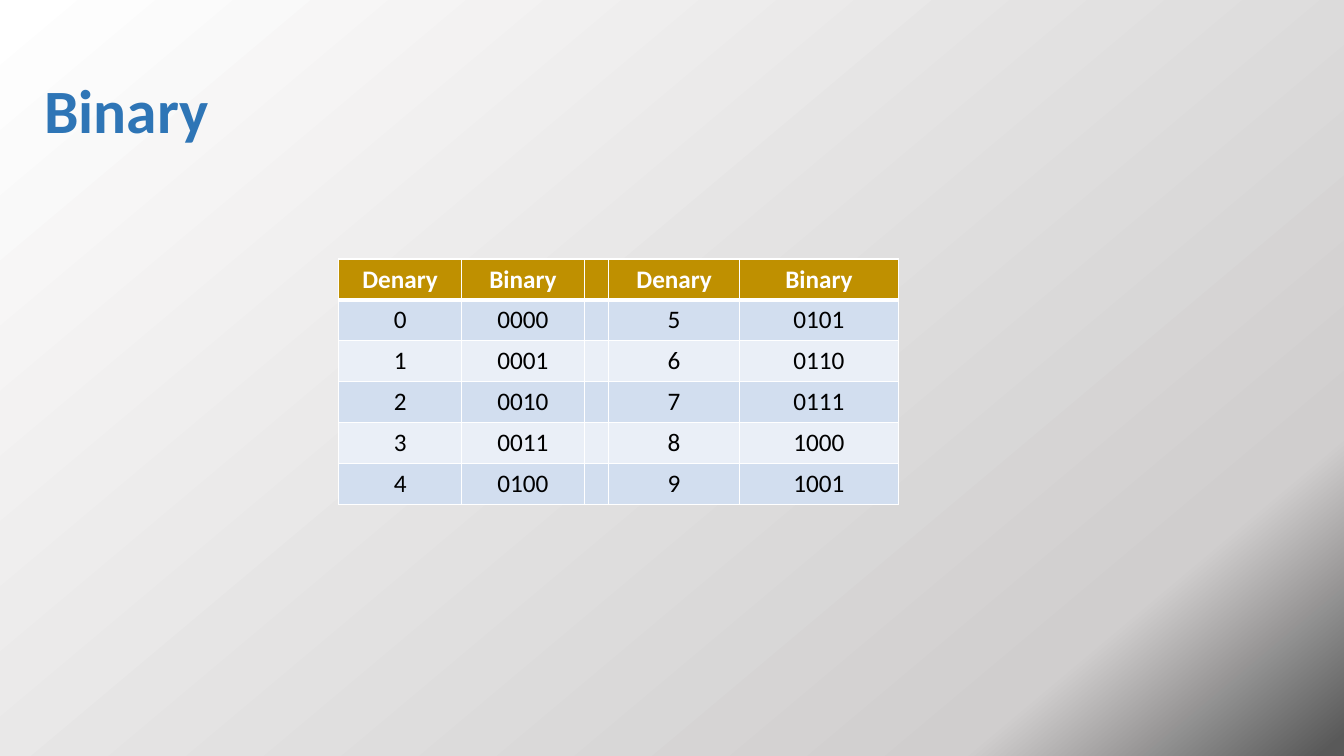
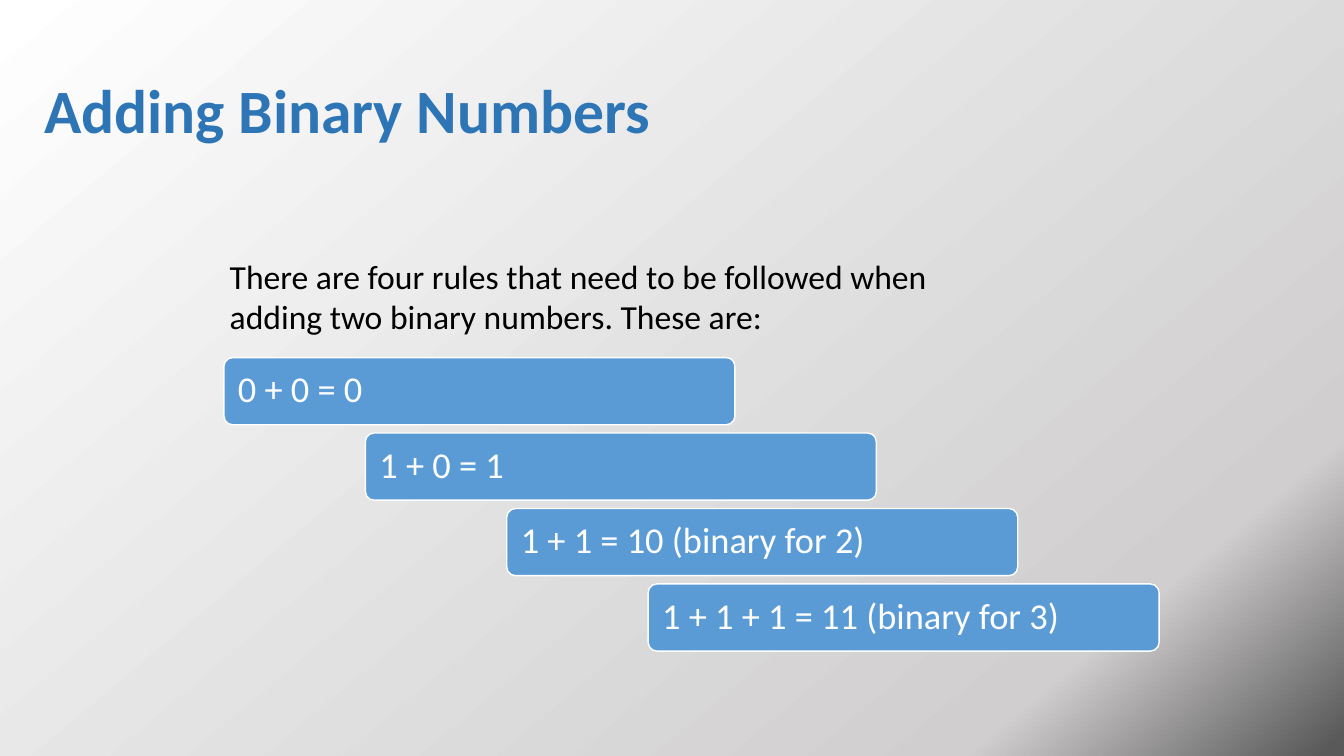
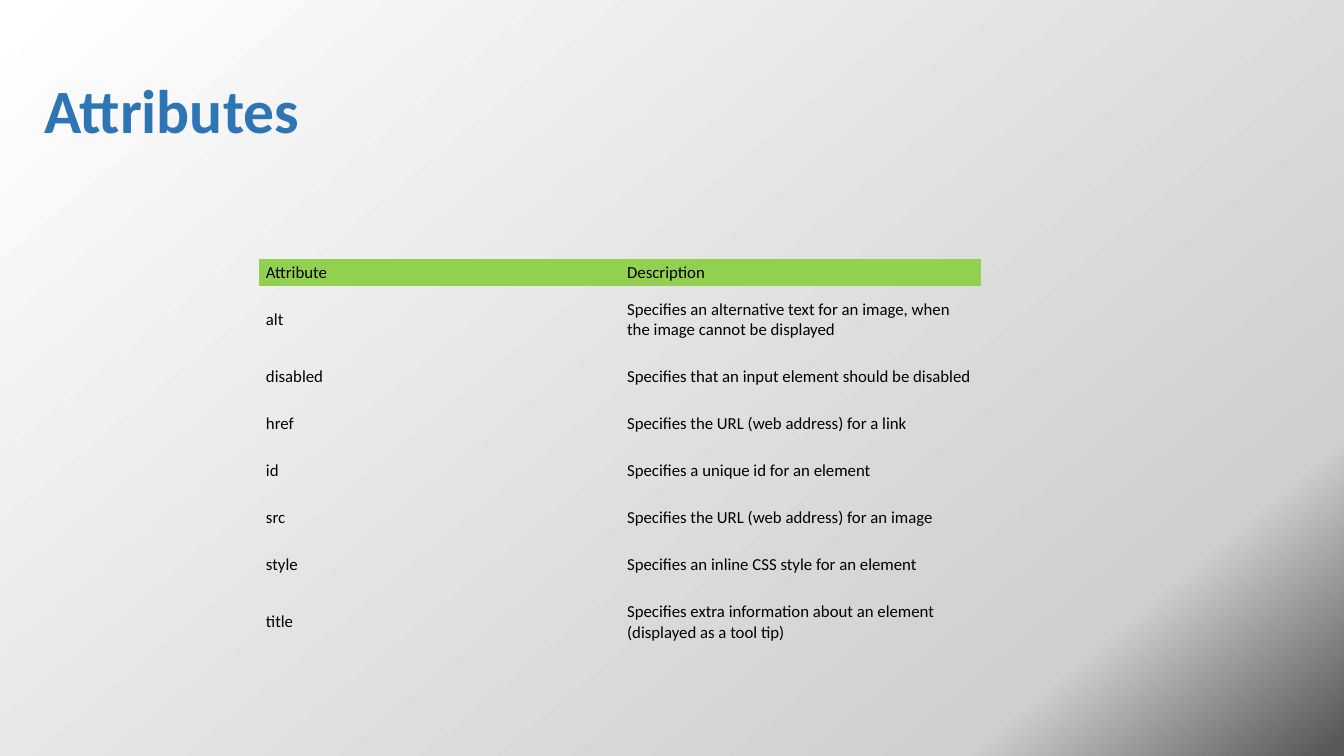
"""Build three slides on binary numbers and HTML attributes."""
from lxml import etree
from pptx import Presentation
from pptx.dml.color import RGBColor
from pptx.enum.shapes import MSO_SHAPE
from pptx.enum.text import MSO_ANCHOR, PP_ALIGN
from pptx.oxml.ns import qn
from pptx.util import Pt

ROUNDED = MSO_SHAPE.ROUNDED_RECTANGLE
TOP, MIDDLE = MSO_ANCHOR.TOP, MSO_ANCHOR.MIDDLE
LEFT, CENTER = PP_ALIGN.LEFT, PP_ALIGN.CENTER

FONT = "Calibri"
BLACK, WHITE, TITLE_BLUE, RULE_BLUE = "000000", "FFFFFF", "2E75B6", "5B9BD5"
GOLD, GREEN, BANDS = "BF9000", "92D050", ("D2DEEF", "EAEFF7")
BACKGROUND = [(1, "595959"), (17, "D0CECE"), (100, "FFFFFF")]
PLAIN_TABLE = "{2D5ABB26-0587-4C30-8999-92F81FD0307C}"

BINARY_HEAD = ["Denary", "Binary", "", "Denary", "Binary"]
BINARY_ROWS = [[str(n), f"{n:04b}", "", str(n + 5), f"{n + 5:04b}"] for n in range(5)]
BINARY_COLS = [87.8, 87.8, 16.8, 93.6, 113.4]

INTRO = ("There are four rules that need to be followed when adding two "
         "binary numbers. These are:")
RULES = ["0 + 0 = 0", "1 + 0 = 1", "1 + 1 = 10 (binary for 2)",
         "1 + 1 + 1 = 11 (binary for 3)"]

ATTRIBUTES = [
    ("Attribute", "Description"),
    ("alt", "Specifies an alternative text for an image, when the image cannot be displayed"),
    ("disabled", "Specifies that an input element should be disabled"),
    ("href", "Specifies the URL (web address) for a link"),
    ("id", "Specifies a unique id for an element"),
    ("src", "Specifies the URL (web address) for an image"),
    ("style", "Specifies an inline CSS style for an element"),
    ("title", "Specifies extra information about an element (displayed as a tool tip)"),
]
ATTRIBUTE_HEIGHTS = [19.4, 48, 33.6, 33.6, 33.6, 33.6, 33.6, 48]


def rgb(color):
    return RGBColor.from_string(color)


def set_text(tf, text, size, color, bold=False, align=LEFT, spacing=None):
    tf.text = text
    p = tf.paragraphs[0]
    p.alignment = align
    if spacing:
        p.line_spacing = spacing
    for r in p.runs:
        r.font.name, r.font.size, r.font.bold = FONT, Pt(size), bold
        r.font.color.rgb = rgb(color)


def set_background(master):
    fill = master.background.fill
    fill.gradient()
    fill.gradient_angle = 130
    stops = master.element.find(".//" + qn("a:gsLst"))
    stops.clear()
    for position, color in BACKGROUND:
        gs = etree.SubElement(stops, qn("a:gs"), pos=str(position * 1000))
        etree.SubElement(gs, qn("a:srgbClr"), val=color)


def add_text(s, box, text, size, color, bold=False, anchor=TOP, spacing=None):
    tf = s.shapes.add_textbox(*map(Pt, box)).text_frame
    tf.word_wrap = True
    tf.vertical_anchor = anchor
    set_text(tf, text, size, color, bold, spacing=spacing)


def add_slide(prs, title):
    s = prs.slides.add_slide(prs.slide_layouts[6])
    add_text(s, (24.5, 28.8, 913, 104.4), title, 44, TITLE_BLUE, True, MIDDLE, 0.9)
    return s


def add_table(s, left, top, widths, heights):
    frame = s.shapes.add_table(len(heights), len(widths), Pt(left), Pt(top),
                               Pt(sum(widths)), Pt(sum(heights)))
    table = frame.table
    table.first_row = table.horz_banding = False
    frame._element.find(".//" + qn("a:tableStyleId")).text = PLAIN_TABLE
    for column, width in zip(table.columns, widths):
        column.width = Pt(width)
    for row, height in zip(table.rows, heights):
        row.height = Pt(height)
    return table


def fill_cell(cell, color):
    cell.fill.solid()
    cell.fill.fore_color.rgb = rgb(color)


def set_borders(cell, top, bottom):
    tcPr = cell._tc.get_or_add_tcPr()
    widths = {"lnL": 1, "lnR": 1, "lnT": top, "lnB": bottom}
    for i, (side, width) in enumerate(widths.items()):
        ln = etree.Element(qn("a:" + side), w=str(Pt(width)))
        fill = etree.SubElement(ln, qn("a:solidFill"))
        etree.SubElement(fill, qn("a:srgbClr"), val=WHITE)
        tcPr.insert(i, ln)


def binary_slide(prs):
    s = add_slide(prs, "Binary")
    rows = [BINARY_HEAD] + BINARY_ROWS
    table = add_table(s, 241.9, 185, BINARY_COLS, [29.2] * len(rows))
    for i, row in enumerate(rows):
        head = i == 0
        for j, text in enumerate(row):
            cell = table.cell(i, j)
            set_text(cell.text_frame, text, 18, WHITE if head else BLACK, head, CENTER)
            fill_cell(cell, GOLD if head else BANDS[(i - 1) % 2])
            set_borders(cell, 3 if i == 1 else 1, 3 if head else 1)


def adding_slide(prs):
    s = add_slide(prs, "Adding Binary Numbers")
    for i, rule in enumerate(RULES):
        sp = s.shapes.add_shape(ROUNDED, Pt(160 + 101 * i), Pt(255.4 + 53.9 * i),
                                Pt(365), Pt(48))
        sp.adjustments[0] = 0.13
        sp.shadow.inherit = False
        sp.fill.solid()
        sp.fill.fore_color.rgb = rgb(RULE_BLUE)
        sp.line.color.rgb = rgb(WHITE)
        sp.line.width = Pt(1)
        tf = sp.text_frame
        tf.margin_left = tf.margin_right = tf.margin_top = tf.margin_bottom = Pt(8.2)
        tf.vertical_anchor = MIDDLE
        set_text(tf, rule, 26, WHITE, spacing=0.9)
    add_text(s, (157, 179.3, 561.6, 87), INTRO, 24, BLACK)


def attributes_slide(prs):
    s = add_slide(prs, "Attributes")
    table = add_table(s, 185, 185, [258, 258], ATTRIBUTE_HEIGHTS)
    for i, row in enumerate(ATTRIBUTES):
        for j, text in enumerate(row):
            cell = table.cell(i, j)
            cell.margin_left = cell.margin_right = Pt(5)
            cell.margin_top = cell.margin_bottom = Pt(2.4)
            cell.vertical_anchor = MIDDLE
            set_text(cell.text_frame, text, 12, BLACK)
            if i == 0:
                fill_cell(cell, GREEN)
            else:
                cell.fill.background()


def main():
    prs = Presentation()
    prs.slide_width, prs.slide_height = Pt(960), Pt(540)
    set_background(prs.slide_master)
    binary_slide(prs)
    adding_slide(prs)
    attributes_slide(prs)
    prs.save("out.pptx")


if __name__ == "__main__":
    main()
